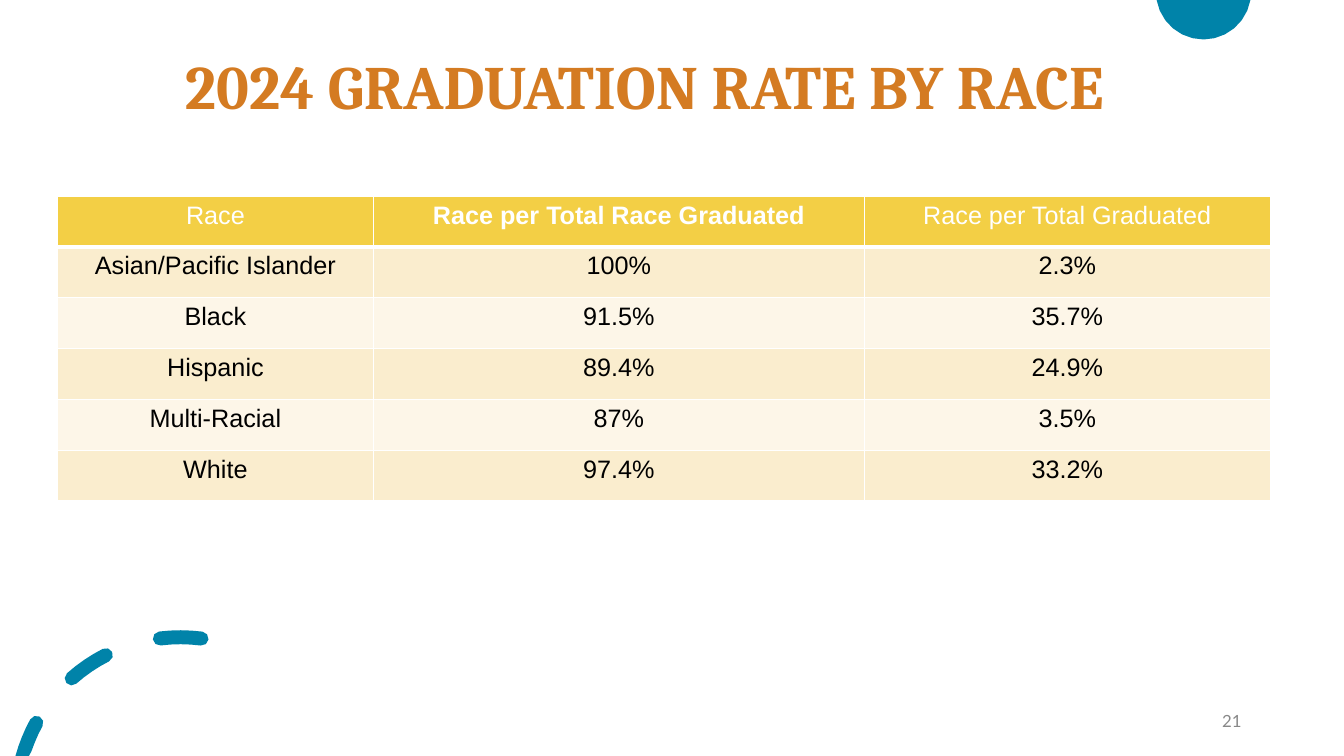
from dataclasses import dataclass
from math import cos, radians, sin

from lxml.etree import SubElement
from pptx import Presentation
from pptx.dml.color import RGBColor
from pptx.enum.text import MSO_ANCHOR, PP_ALIGN
from pptx.oxml.ns import qn
from pptx.util import Pt

SLIDE_WIDTH, SLIDE_HEIGHT = 960, 540


@dataclass(frozen=True)
class Theme:
    accent: str = "0083A9"
    title: str = "D47B22"
    header: str = "F3CF45"
    bands: tuple = ("FAEDCE", "FDF6E8")
    border: str = "FFFFFF"
    header_text: str = "FFFFFF"
    body_text: str = "000000"
    number: str = "888888"
    title_font: str = "Cambria"
    table_font: str = "Arial"
    number_font: str = "Lato"
    title_size: int = 44
    table_size: int = 18
    number_size: int = 12


THEME = Theme()

RATES = [
    ("Race", "Race per Total Race Graduated", "Race per Total Graduated"),
    ("Asian/Pacific Islander", "100%", "2.3%"),
    ("Black", "91.5%", "35.7%"),
    ("Hispanic", "89.4%", "24.9%"),
    ("Multi-Racial", "87%", "3.5%"),
    ("White", "97.4%", "33.2%"),
]
COLUMN_WIDTHS = (225.8, 350.6, 290)
ROW_HEIGHT = 36.3
BOLD_HEADER_COLUMN = 1

# Start and end angles of the dashes, in degrees
DASHES = ((151.4, 164.6), (117, 131.5), (82.6, 97.2))
DASH_CENTER, DASH_RADIUS, DASH_HALF_WIDTH = (128.9, 572.4), 117.2, 5


def style_paragraph(paragraph, font, size, color, alignment, bold=False):
    paragraph.alignment = alignment
    paragraph.font.name = font
    paragraph.font.size = Pt(size)
    paragraph.font.bold = bold
    paragraph.font.color.rgb = RGBColor.from_string(color)


def place(shape, left, top, width, height):
    shape.left, shape.top = Pt(left), Pt(top)
    shape.width, shape.height = Pt(width), Pt(height)


def arc_points(center, radius, start, end, steps=4):
    """Points on an arc; angles run counterclockwise from the right."""
    angles = [radians(start + (end - start) * i / steps) for i in range(steps + 1)]
    return [(center[0] + radius * cos(a), center[1] - radius * sin(a)) for a in angles]


def dash_outline(start, end):
    """Outline of a curved stroke with round ends."""
    first, last = arc_points(DASH_CENTER, DASH_RADIUS, start, end, 1)
    half = DASH_HALF_WIDTH
    # Each cap already begins and ends on the long edges
    return (
        arc_points(DASH_CENTER, DASH_RADIUS + half, start, end)[1:-1]
        + arc_points(last, half, end, end + 180)
        + arc_points(DASH_CENTER, DASH_RADIUS - half, end, start)[1:-1]
        + arc_points(first, half, start + 180, start + 360)
    )


def add_outlines(slide, outlines, color):
    """One filled shape made of one or more closed outlines."""
    # Keep the outlines inside the bottom edge
    contours = [[(Pt(x), Pt(min(y, SLIDE_HEIGHT))) for x, y in outline]
                for outline in outlines]
    builder = slide.shapes.build_freeform(*contours[0][0])
    for index, contour in enumerate(contours):
        if index:
            builder.move_to(*contour[0])
        builder.add_line_segments(contour[1:], close=True)
    shape = builder.convert_to_shape()
    shape.shadow.inherit = False
    shape.fill.solid()
    shape.fill.fore_color.rgb = RGBColor.from_string(color)
    shape.line.fill.background()


def set_title(slide, text):
    title = slide.shapes.title
    place(title, 27, 11.5, 866.9, 104.4)
    title.text_frame.text = text
    title.text_frame.vertical_anchor = MSO_ANCHOR.MIDDLE
    paragraph = title.text_frame.paragraphs[0]
    style_paragraph(paragraph, THEME.title_font, THEME.title_size, THEME.title,
                    PP_ALIGN.CENTER, bold=True)
    paragraph.line_spacing = 0.9


def add_slide_number(slide, text):
    box = slide.shapes.add_textbox(Pt(678), Pt(500.4), Pt(216), Pt(28.8))
    box.text_frame.word_wrap = True
    box.text_frame.vertical_anchor = MSO_ANCHOR.MIDDLE
    box.text_frame.text = text
    style_paragraph(box.text_frame.paragraphs[0], THEME.number_font,
                    THEME.number_size, THEME.number, PP_ALIGN.RIGHT)


def set_borders(cell, widths):
    properties = cell._tc.get_or_add_tcPr()
    for side, width in zip("LRTB", widths):
        line = SubElement(properties, qn(f"a:ln{side}"), w=str(Pt(width)))
        fill = SubElement(line, qn("a:solidFill"))
        SubElement(fill, qn("a:srgbClr"), val=THEME.border)


def add_rate_table(slide, left, top):
    frame = slide.shapes.add_table(
        len(RATES), len(COLUMN_WIDTHS), Pt(left), Pt(top),
        Pt(sum(COLUMN_WIDTHS)), Pt(ROW_HEIGHT * len(RATES)))
    table = frame.table
    for column, width in zip(table.columns, COLUMN_WIDTHS):
        column.width = Pt(width)
    for row_index, values in enumerate(RATES):
        table.rows[row_index].height = Pt(ROW_HEIGHT)
        is_header = row_index == 0
        fill = THEME.header if is_header else THEME.bands[(row_index - 1) % 2]
        color = THEME.header_text if is_header else THEME.body_text
        top_width = 3 if row_index == 1 else 1
        bottom_width = 3 if is_header else 1
        for column_index, value in enumerate(values):
            cell = table.cell(row_index, column_index)
            set_borders(cell, (1, 1, top_width, bottom_width))
            cell.fill.solid()
            cell.fill.fore_color.rgb = RGBColor.from_string(fill)
            cell.text = value
            style_paragraph(cell.text_frame.paragraphs[0], THEME.table_font,
                            THEME.table_size, color, PP_ALIGN.CENTER,
                            bold=is_header and column_index == BOLD_HEADER_COLUMN)


def main():
    presentation = Presentation()
    presentation.slide_width = Pt(SLIDE_WIDTH)
    presentation.slide_height = Pt(SLIDE_HEIGHT)
    slide = presentation.slides.add_slide(presentation.slide_layouts[5])

    # Decoration: cut circle at the top, dashed ring at the bottom
    cut_circle = arc_points((859.7, -5.8), 34, 189.8, 350.2, 12)
    add_outlines(slide, [cut_circle], THEME.accent)
    add_outlines(slide, [dash_outline(*angles) for angles in DASHES], THEME.accent)

    # Content
    set_title(slide, "2024 GRADUATION RATE BY RACE")
    add_rate_table(slide, 41, 140.2)
    add_slide_number(slide, "21")

    presentation.save("out.pptx")


if __name__ == "__main__":
    main()
